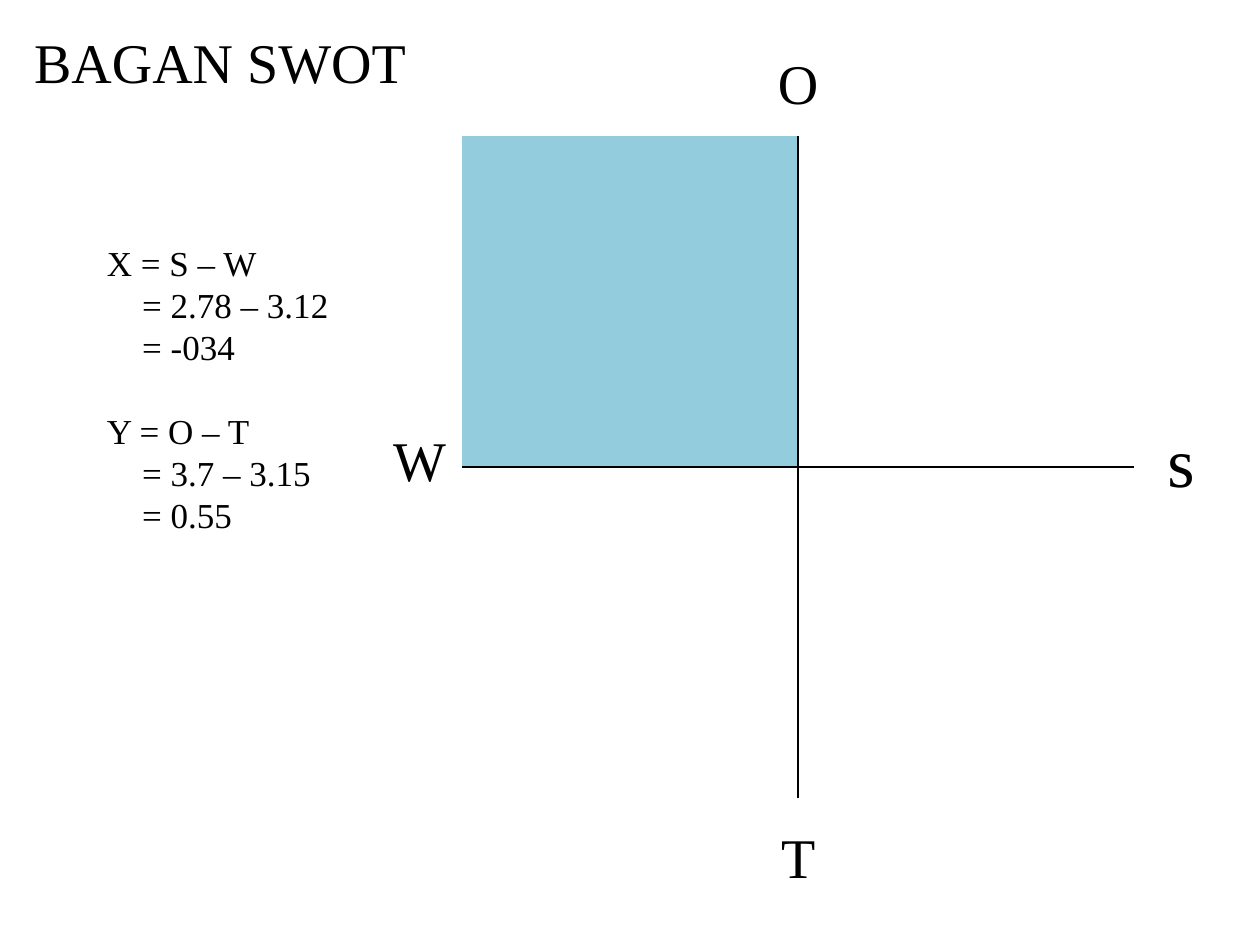
from collections import namedtuple

from lxml import etree
from pptx import Presentation
from pptx.dml.color import RGBColor
from pptx.enum.text import MSO_ANCHOR, MSO_AUTO_SIZE, PP_ALIGN
from pptx.oxml.ns import qn
from pptx.util import Inches, Pt

LEFT, CENTER = PP_ALIGN.LEFT, PP_ALIGN.CENTER
TOP, MIDDLE = MSO_ANCHOR.TOP, MSO_ANCHOR.MIDDLE
FIT_SHAPE = MSO_AUTO_SIZE.SHAPE_TO_FIT_TEXT
NO_AUTO_SIZE = MSO_AUTO_SIZE.NONE
PLAIN_TABLE = "{2D5ABB26-0587-4C30-8999-92F81FD0307C}"

Box = namedtuple("Box", "left top width height")
Theme = namedtuple("Theme", "font ink quadrant heading letter small_s body line")
THEME = Theme("Times New Roman", "000000", "93CDDD", 32, 32, 40, 20, 24)

EQUATIONS = [
    ["X = S – W", "= 2.78 – 3.12", "= -034"],
    ["Y = O – T", "= 3.7 – 3.15", "= 0.55"],
]


def inches(box):
    return [Inches(length) for length in box]


def style_para(para, size, align):
    para.alignment = align
    for span in para.runs:
        span.font.name = THEME.font
        span.font.size = Pt(size)
        span.font.color.rgb = RGBColor.from_string(THEME.ink)


def add_title(page, box, text):
    title = page.shapes.title
    title.left, title.top, title.width, title.height = inches(box)
    frame = title.text_frame
    frame.text = text
    frame.word_wrap = False
    frame.auto_size = NO_AUTO_SIZE
    frame.vertical_anchor = TOP
    style_para(frame.paragraphs[0], THEME.heading, LEFT)


def add_equations(page, box, groups):
    frame = page.shapes.add_textbox(*inches(box)).text_frame
    frame.word_wrap = True
    frame.vertical_anchor = MIDDLE
    for group_index, group in enumerate(groups):
        for line_index, line in enumerate(group):
            first = group_index == line_index == 0
            para = frame.paragraphs[0] if first else frame.add_paragraph()
            para.text = line
            para.line_spacing = Pt(THEME.line)
            if line_index:
                # Results line up under the first equals sign
                para._p.get_or_add_pPr().set("marL", str(Inches(0.28)))
            elif group_index:
                para.space_before = Pt(THEME.line)
            style_para(para, THEME.body, LEFT)


def set_borders(cell, drawn):
    properties = cell._tc.get_or_add_tcPr()
    for side in "LRTB":
        border = etree.SubElement(properties, qn(f"a:ln{side}"), w=str(Pt(1)))
        if side in drawn:
            fill = etree.SubElement(border, qn("a:solidFill"))
            etree.SubElement(fill, qn("a:srgbClr"), val=THEME.ink)
        else:
            etree.SubElement(border, qn("a:noFill"))


def add_quadrants(page, box):
    frame = page.shapes.add_table(2, 2, *inches(box))
    table = frame.table
    table.first_row = table.horz_banding = False
    table._tbl.tblPr.find(qn("a:tableStyleId")).text = PLAIN_TABLE
    for column in table.columns:
        column.width = Inches(box.width / 2)
    for row in table.rows:
        row.height = Inches(box.height / 2)
    # Only the inner edges are drawn, so they form the two axes
    for row in range(2):
        for column in range(2):
            cell = table.cell(row, column)
            set_borders(cell, "RL"[column] + "BT"[row])
            if row == column == 0:
                cell.fill.solid()
                cell.fill.fore_color.rgb = RGBColor.from_string(THEME.quadrant)
            else:
                cell.fill.background()


def add_axis_labels(page, box):
    # Letter, size, and its centre as shares of the quadrant box
    labels = [
        ("s", THEME.small_s, 1.07, 0.49),
        ("W", THEME.letter, -0.07, 0.49),
        ("O", THEME.letter, 0.5, -0.08),
        ("T", THEME.letter, 0.5, 1.09),
    ]
    for letter, size, across, down in labels:
        width, height = 0.55, size * 0.016 + 0.13
        label_box = Box(box.left + across * box.width - width / 2,
                        box.top + down * box.height - height / 2,
                        width, height)
        frame = page.shapes.add_textbox(*inches(label_box)).text_frame
        frame.text = letter
        frame.word_wrap = False
        frame.auto_size = FIT_SHAPE
        style_para(frame.paragraphs[0], size, CENTER)


def main():
    deck = Presentation()
    deck.slide_width, deck.slide_height = Inches(10), Inches(7.5)
    page = deck.slides.add_slide(deck.slide_layouts[5])
    chart_box = Box(3.67, 1.08, 5.33, 5.25)

    add_title(page, Box(0.17, 0.17, 3.18, 0.64), "BAGAN SWOT")
    add_equations(page, Box(0.75, 1.33, 2.67, 3.5), EQUATIONS)
    add_quadrants(page, chart_box)
    add_axis_labels(page, chart_box)
    deck.save("out.pptx")


if __name__ == "__main__":
    main()
